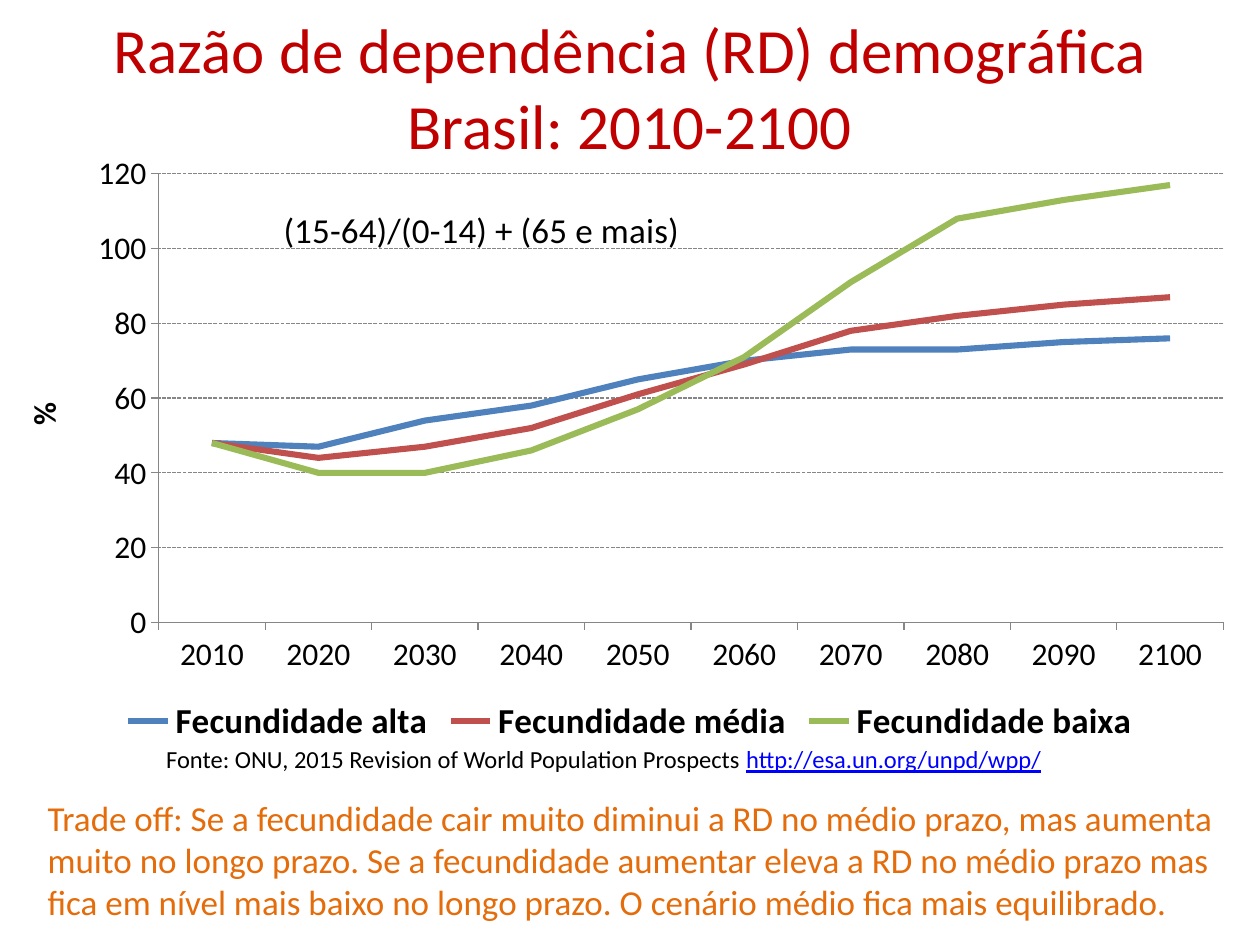
from typing import NamedTuple

import pptx
from lxml import etree
from pptx import util as u
from pptx.chart.data import CategoryChartData
from pptx.dml.color import RGBColor
from pptx.enum import chart as ch, dml, text
from pptx.oxml.ns import qn

FONT = "Calibri"
BLACK = RGBColor(0x00, 0x00, 0x00)
GREY = RGBColor(0x86, 0x86, 0x86)
RED = RGBColor(0xC0, 0x00, 0x00)
ORANGE = RGBColor(0xE4, 0x6C, 0x0A)
LINK_BLUE = RGBColor(0x00, 0x00, 0xFF)


class Scenario(NamedTuple):
    name: str
    color: RGBColor
    ratios: tuple[int, ...]


class Span(NamedTuple):
    words: str
    color: RGBColor
    underline: bool = False


class Note(NamedTuple):
    left: float
    top: float
    width: float
    height: float
    size: int
    spans: tuple[Span, ...]


SCENARIOS = (
    Scenario("Fecundidade alta", RGBColor(0x4F, 0x81, 0xBD),
             (48, 47, 54, 58, 65, 70, 73, 73, 75, 76)),
    Scenario("Fecundidade média", RGBColor(0xC0, 0x50, 0x4D),
             (48, 44, 47, 52, 61, 69, 78, 82, 85, 87)),
    Scenario("Fecundidade baixa", RGBColor(0x9B, 0xBB, 0x59),
             (48, 40, 40, 46, 57, 71, 91, 108, 113, 117)),
)

NOTES = (
    Note(3.1, 14.88, 20.19, 0.86, 14, (
        Span("Fonte: ONU, 2015 Revision of World Population Prospects ", BLACK),
        Span("http://esa.un.org/unpd/wpp/", LINK_BLUE, True),
    )),
    Note(0.71, 15.93, 24.0, 2.82, 20, (
        Span("Trade off: Se a fecundidade cair muito diminui a RD no médio prazo, "
             "mas aumenta muito no longo prazo. Se a fecundidade aumentar eleva a RD "
             "no médio prazo mas fica em nível mais baixo no longo prazo. "
             "O cenário médio fica mais equilibrado.", ORANGE),
    )),
)


def style_font(font, size: int, color: RGBColor = BLACK, bold: bool = False) -> None:
    font.name, font.size, font.bold = FONT, u.Pt(size), bold
    font.color.rgb = color


def set_layout(parent, index: int, **values: str | float) -> None:
    """Give a chart part a manual layout, as its child number index."""
    for old in parent.findall(qn("c:layout")):
        parent.remove(old)
    layout = etree.Element(qn("c:layout"))
    manual = etree.SubElement(layout, qn("c:manualLayout"))
    for tag, value in values.items():
        etree.SubElement(manual, qn(f"c:{tag}")).set("val", str(value))
    parent.insert(index, layout)


def add_title(slide) -> None:
    title = slide.shapes.title
    title.left, title.top, title.width, title.height = map(u.Cm, (1.27, 0.33, 22.86, 2.82))
    frame = title.text_frame
    frame.text = "Razão de dependência (RD) demográfica\vBrasil: 2010-2100"
    frame.vertical_anchor = text.MSO_ANCHOR.MIDDLE
    para = frame.paragraphs[0]
    para.alignment = text.PP_ALIGN.CENTER
    for span in para.runs:
        style_font(span.font, 36, RED)


def format_axes(chart) -> None:
    for axis in (chart.category_axis, chart.value_axis):
        axis.major_tick_mark = ch.XL_TICK_MARK.OUTSIDE
        axis.format.line.color.rgb = GREY
    axis = chart.value_axis
    axis.minimum_scale, axis.maximum_scale, axis.major_unit = 0, 120, 20
    axis.tick_labels.number_format = "#,##0"
    axis.tick_labels.number_format_is_linked = False
    grid = axis.major_gridlines.format.line
    grid.color.rgb, grid.width = GREY, u.Pt(0.75)
    grid.dash_style = dml.MSO_LINE.SQUARE_DOT
    frame = axis.axis_title.text_frame
    frame.text = "%"
    style_font(frame.paragraphs[0].runs[0].font, 18, bold=True)


def add_ratio_chart(slide) -> None:
    data = CategoryChartData(number_format="#,##0")
    data.categories = [str(year) for year in range(2010, 2101, 10)]
    for scenario in SCENARIOS:
        data.add_series(scenario.name, scenario.ratios)
    chart = slide.shapes.add_chart(
        ch.XL_CHART_TYPE.LINE, u.Cm(0), u.Cm(2.92), u.Cm(25.4), u.Cm(12.19), data).chart
    style_font(chart.font, 18)
    format_axes(chart)

    for series, scenario in zip(chart.plots[0].series, SCENARIOS):
        series.smooth = False
        series.marker.style = ch.XL_MARKER_STYLE.NONE
        series.format.line.color.rgb = scenario.color
        series.format.line.width = u.Pt(3.5)

    chart.has_legend = True
    chart.legend.position = ch.XL_LEGEND_POSITION.BOTTOM
    chart.legend.include_in_layout = False
    style_font(chart.legend.font, 20, bold=True)

    frame = chart.chart_title.text_frame
    frame.text = "(15-64)/(0-14) + (65 e mais)"
    style_font(frame.paragraphs[0].runs[0].font, 20)
    title = chart.chart_title._element
    set_layout(title, 1, xMode="edge", yMode="edge", x=0.22, y=0.09)
    title.find(qn("c:overlay")).set("val", "1")
    plot_area = chart._chartSpace.find(f".//{qn('c:plotArea')}")
    set_layout(plot_area, 0, layoutTarget="inner", xMode="edge", yMode="edge",
               x=0.126, y=0.048, w=0.845, h=0.742)


def add_note(slide, note: Note) -> None:
    box = slide.shapes.add_textbox(
        u.Cm(note.left), u.Cm(note.top), u.Cm(note.width), u.Cm(note.height))
    frame = box.text_frame
    frame.word_wrap = True
    frame.auto_size = text.MSO_AUTO_SIZE.SHAPE_TO_FIT_TEXT
    for words, color, underline in note.spans:
        span = frame.paragraphs[0].add_run()
        span.text = words
        style_font(span.font, note.size, color)
        span.font.underline = underline


def main() -> None:
    deck = pptx.Presentation()
    deck.slide_width, deck.slide_height = u.Cm(25.4), u.Cm(19.05)
    slide = deck.slides.add_slide(deck.slide_layouts.get_by_name("Title Only"))
    add_title(slide)
    add_ratio_chart(slide)
    for note in NOTES:
        add_note(slide, note)
    deck.save("out.pptx")


if __name__ == "__main__":
    main()
